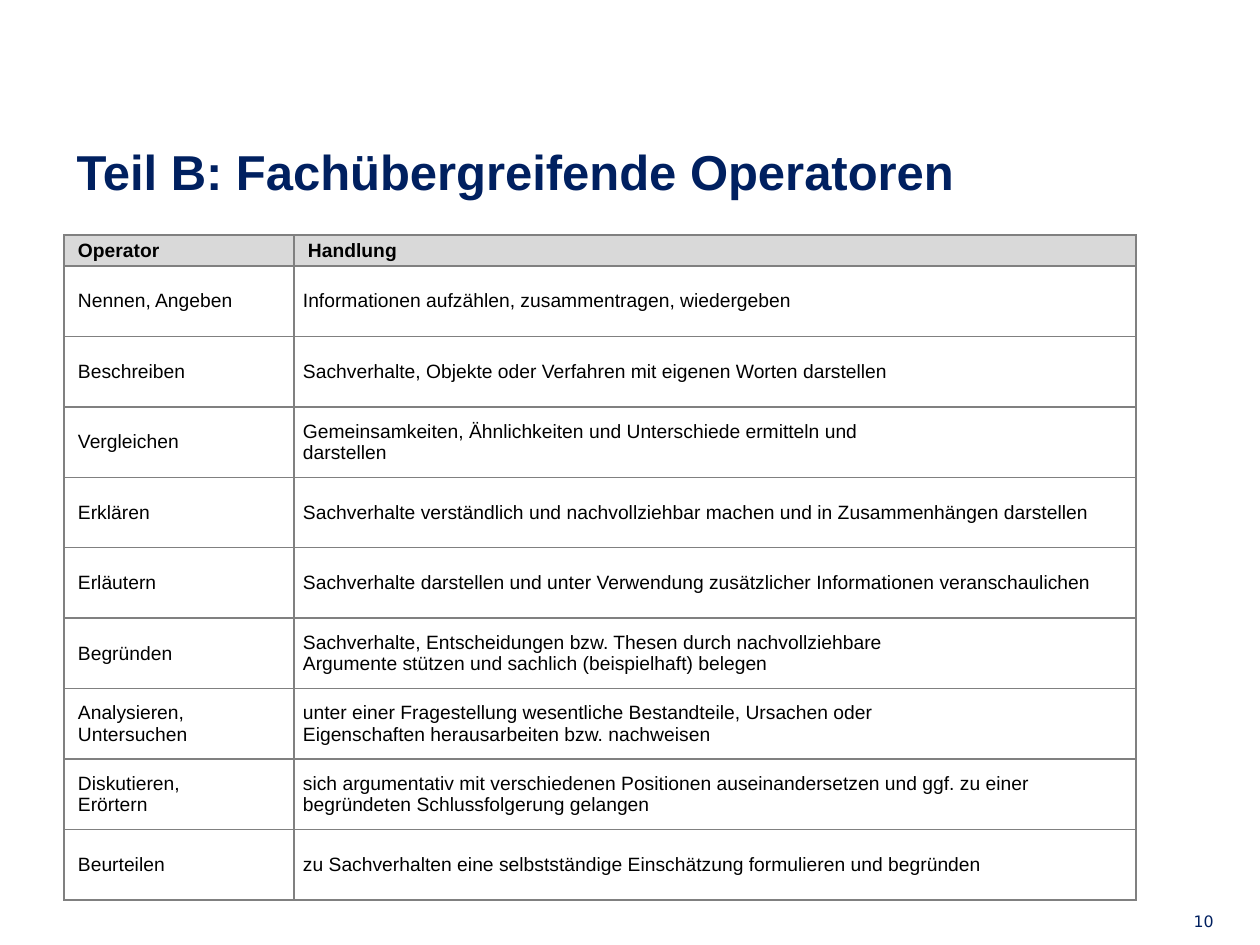
from lxml import etree
from pptx import Presentation
from pptx.dml.color import RGBColor
from pptx.enum import text
from pptx.oxml.ns import qn
from pptx.util import Pt

PX = 914400 / 126
COLORS = {"navy": "002060", "black": "000000", "header": "D9D9D9", "border": "808080"}

TITLE = "Teil B: Fachübergreifende Operatoren"
PAGE_NUMBER = "10"
HEADER = ("Operator", "Handlung")
OPERATORS = [
    ("Nennen, Angeben", "Informationen aufzählen, zusammentragen, wiedergeben"),
    ("Beschreiben", "Sachverhalte, Objekte oder Verfahren mit eigenen Worten darstellen"),
    ("Vergleichen",
     "Gemeinsamkeiten, Ähnlichkeiten und Unterschiede ermitteln und\ndarstellen"),
    ("Erklären",
     "Sachverhalte verständlich und nachvollziehbar machen und in Zusammenhängen darstellen"),
    ("Erläutern",
     "Sachverhalte darstellen und unter Verwendung zusätzlicher Informationen veranschaulichen"),
    ("Begründen",
     "Sachverhalte, Entscheidungen bzw. Thesen durch nachvollziehbare\n"
     "Argumente stützen und sachlich (beispielhaft) belegen"),
    ("Analysieren,\nUntersuchen",
     "unter einer Fragestellung wesentliche Bestandteile, Ursachen oder\n"
     "Eigenschaften herausarbeiten bzw. nachweisen"),
    ("Diskutieren,\nErörtern",
     "sich argumentativ mit verschiedenen Positionen auseinandersetzen und ggf. zu einer "
     "begründeten Schlussfolgerung gelangen"),
    ("Beurteilen",
     "zu Sachverhalten eine selbstständige Einschätzung formulieren und begründen"),
]

TABLE_LEFT, TABLE_TOP, TABLE_HEIGHT = 64, 235, 665
COLUMN_WIDTHS = (230, 842)
HEADER_HEIGHT = 31
CELL_INSET, INDENT = 9, 5


def px(n):
    return round(n * PX)


def style(p, size, color, name="Arial", bold=False):
    p.font.size, p.font.name, p.font.bold = Pt(size), name, bold
    p.font.color.rgb = RGBColor.from_string(COLORS[color])


def add_borders(cell):
    """Put the four border lines ahead of the fill, as the schema requires."""
    props = cell._tc.get_or_add_tcPr()
    for i, side in enumerate(("lnL", "lnR", "lnT", "lnB")):
        line = etree.Element(qn(f"a:{side}"), w=str(Pt(1)))
        fill = etree.SubElement(line, qn("a:solidFill"))
        etree.SubElement(fill, qn("a:srgbClr"), val=COLORS["border"])
        props.insert(i, line)


def fill_cell(cell, words, is_header, indented):
    cell.margin_left = cell.margin_right = px(CELL_INSET)
    cell.margin_top = cell.margin_bottom = 0
    cell.vertical_anchor = text.MSO_ANCHOR.MIDDLE
    if is_header:
        cell.fill.solid()
        cell.fill.fore_color.rgb = RGBColor.from_string(COLORS["header"])
    else:
        cell.fill.background()
    add_borders(cell)
    p = cell.text_frame.paragraphs[0]
    p.text = words
    p.space_after = Pt(4)
    if indented:
        p._p.get_or_add_pPr().set("marL", str(px(INDENT)))
    style(p, 11, "black", bold=is_header)


def add_operator_table(s):
    rows = [HEADER, *OPERATORS]
    table = s.shapes.add_table(len(rows), len(HEADER), px(TABLE_LEFT), px(TABLE_TOP),
                               px(sum(COLUMN_WIDTHS)), px(TABLE_HEIGHT)).table
    for column, width in zip(table.columns, COLUMN_WIDTHS):
        column.width = px(width)
    row_height = (TABLE_HEIGHT - HEADER_HEIGHT) / len(OPERATORS)
    for r, row in enumerate(rows):
        is_header = r == 0
        table.rows[r].height = px(HEADER_HEIGHT if is_header else row_height)
        for c, words in enumerate(row):
            fill_cell(table.cell(r, c), words, is_header, indented=is_header or c == 0)


def add_title(s):
    title = s.shapes.title
    title.left, title.top, title.width, title.height = map(px, (64, 135, 1317, 72))
    tf = title.text_frame
    tf.text = TITLE
    tf.word_wrap = True
    tf.vertical_anchor = text.MSO_ANCHOR.TOP
    p = tf.paragraphs[0]
    p.alignment = text.PP_ALIGN.LEFT
    style(p, 28, "navy", bold=True)


def add_page_number(s):
    tf = s.shapes.add_textbox(*map(px, (1143, 906, 83, 39))).text_frame
    tf.word_wrap = True
    p = tf.paragraphs[0]
    p.text = PAGE_NUMBER
    p.alignment = text.PP_ALIGN.RIGHT
    style(p, 9, "navy", name="DejaVu Sans")


def main():
    prs = Presentation()
    prs.slide_width, prs.slide_height = px(1260), px(945)
    s = prs.slides.add_slide(prs.slide_layouts[5])
    add_page_number(s)
    add_operator_table(s)
    add_title(s)
    prs.save("out.pptx")


if __name__ == "__main__":
    main()
